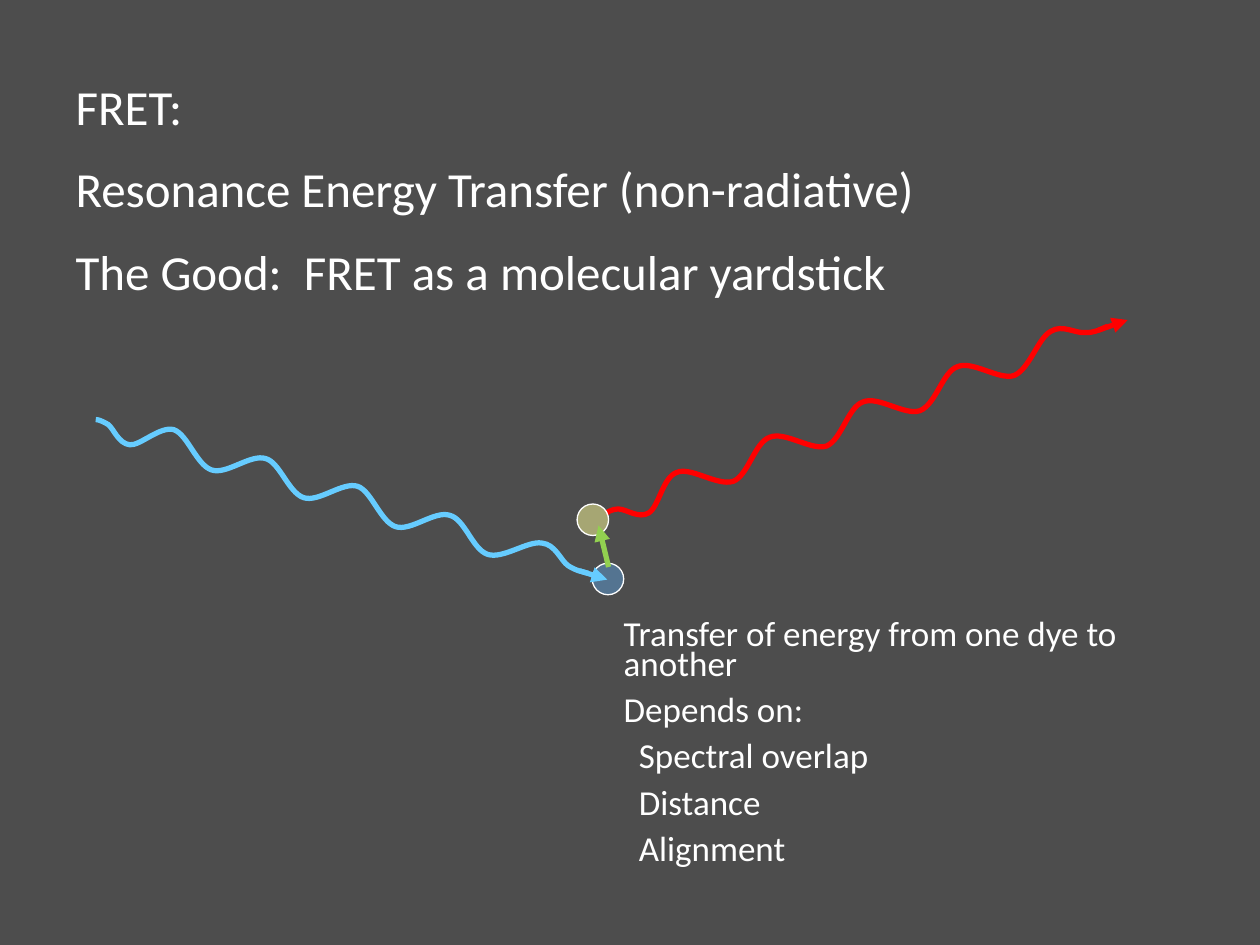
from dataclasses import dataclass

from lxml.etree import SubElement
from pptx import Presentation
from pptx.dml.color import RGBColor
from pptx.enum.shapes import MSO_CONNECTOR as Connector, MSO_SHAPE as Preset
from pptx.enum.text import MSO_ANCHOR as Anchor, MSO_AUTO_SIZE as AutoSize, PP_ALIGN as Align
from pptx.oxml.ns import qn
from pptx.util import Emu, Pt

PX = 9144  # 100 px to the inch
WHITE, SKY, RED, GREEN = "FFFFFF", "66CCFF", "FF0000", "92D050"

Point = tuple[int, int]


@dataclass(frozen=True)
class Dye:
    left: int
    top: int
    color: str


@dataclass(frozen=True)
class Arrow:
    start: Point
    end: Point
    color: str


@dataclass(frozen=True)
class Wave:
    """Bezier points: a lead-in, one cycle repeated with a constant step, a tail."""
    lead: list[Point]
    cycle: list[Point]
    step: tuple[float, float]
    tail: list[Point]
    arrow: Arrow

    def points(self, repeats: int = 3) -> list[Point]:
        dx, dy = self.step
        cycles = [(round(x + n * dx), round(y + n * dy))
                  for n in range(repeats) for x, y in self.cycle]
        return self.lead + cycles + self.tail


@dataclass(frozen=True)
class TextBlock:
    left: int
    top: int
    width: int
    height: int
    size: int
    gap: float
    line_spacing: float
    lines: list[tuple[str, int]]  # wording, indent in px


DONOR = Dye(470, 447, "5B9BD5")
ACCEPTOR = Dye(458, 400, "FFFF99")
TRANSFER = Arrow((483, 450), (475, 417), GREEN)

EXCITATION = Wave(
    lead=[(76, 333), (78, 333), (81, 334), (86, 337), (90, 340), (94, 352), (103, 353),
          (111, 354), (127, 338), (138, 341)],
    cycle=[(149, 345), (156, 369), (168, 373), (180, 377), (199, 360), (211, 364)],
    step=(73, 22.4),
    tail=[(369, 412), (375, 436), (387, 440), (399, 444), (419, 429), (430, 431),
          (441, 432), (445, 445), (451, 449), (457, 453), (463, 454), (467, 455)],
    arrow=Arrow((460, 453), (482, 460), SKY),
)
EMISSION = Wave(
    lead=[(481, 407), (482, 407), (485, 404), (491, 404), (497, 404), (507, 412), (515, 407),
          (523, 402), (526, 379), (537, 375), (548, 370), (569, 386), (582, 382)],
    cycle=[(594, 377), (599, 351), (611, 347), (623, 342), (644, 358), (656, 354)],
    step=(74.33, -28),
    tail=[(817, 293), (824, 268), (834, 263), (843, 257), (854, 265), (862, 264),
          (870, 264), (876, 260), (879, 259)],
    arrow=Arrow((872, 262), (895, 254), RED),
)

HEADING = TextBlock(50, 50, 825, 199, 28, 13.5, 1.0, [
    ("FRET:", 0),
    ("Resonance Energy Transfer (non-radiative)", 0),
    ("The Good:  FRET as a molecular yardstick", 0),
])
FACTORS = TextBlock(485, 482, 474, 219, 20, 9.6, 0.7, [
    ("Transfer of energy from one dye to another", 0),
    ("Depends on:", 0),
    ("Spectral overlap", 12),
    ("Distance", 12),
    ("Alignment", 12),
])


def px(length: int) -> Emu:
    return Emu(length * PX)


def rgb(color: str) -> RGBColor:
    return RGBColor.from_string(color)


def style_line(line, color: str, width: float) -> None:
    line.color.rgb = rgb(color)
    line.width = Pt(width)


def fill_text(placeholder, block: TextBlock) -> None:
    placeholder.left, placeholder.top = px(block.left), px(block.top)
    placeholder.width, placeholder.height = px(block.width), px(block.height)
    frame = placeholder.text_frame
    frame.word_wrap = True
    frame.auto_size = AutoSize.NONE
    frame.vertical_anchor = Anchor.MIDDLE
    for number, (wording, indent) in enumerate(block.lines):
        paragraph = frame.add_paragraph() if number else frame.paragraphs[0]
        properties = paragraph._p.get_or_add_pPr()
        properties.set("marL", str(px(indent)))
        properties.set("indent", "0")
        SubElement(properties, qn("a:buNone"))
        paragraph.alignment = Align.LEFT
        paragraph.line_spacing = block.line_spacing
        paragraph.space_before = Pt(block.gap if number else 0)
        paragraph.space_after = Pt(0)
        run = paragraph.add_run()
        run.text = wording
        run.font.name = "Calibri"
        run.font.size = Pt(block.size)
        run.font.color.rgb = rgb(WHITE)


def draw_dye(shapes, dye: Dye) -> None:
    circle = shapes.add_shape(Preset.OVAL, px(dye.left), px(dye.top), px(25), px(25))
    circle.shadow.inherit = False
    circle.fill.solid()
    circle.fill.fore_color.rgb = rgb(dye.color)
    color = circle._element.spPr.find(".//" + qn("a:srgbClr"))
    SubElement(color, qn("a:alpha"), val="50000")
    style_line(circle.line, WHITE, 0.75)


def draw_arrow(shapes, arrow: Arrow) -> None:
    ends = [px(length) for length in arrow.start + arrow.end]
    connector = shapes.add_connector(Connector.STRAIGHT, *ends)
    style_line(connector.line, arrow.color, 3)
    SubElement(connector.line._get_or_add_ln(), qn("a:tailEnd"), type="triangle")
    SubElement(connector._element.spPr, qn("a:effectLst"))


def curve_segments(freeform) -> None:
    """Turn each three straight segments into one cubic Bezier segment."""
    outline = freeform._element.spPr.find(".//" + qn("a:path"))
    segments = outline.findall(qn("a:lnTo"))
    for first in range(0, len(segments), 3):
        curve = SubElement(outline, qn("a:cubicBezTo"))
        for segment in segments[first:first + 3]:
            curve.append(segment[0])
            outline.remove(segment)


def draw_wave(shapes, wave: Wave) -> None:
    start, *rest = wave.points()
    builder = shapes.build_freeform(*start, scale=PX)
    builder.add_line_segments(rest, close=False)
    freeform = builder.convert_to_shape()
    curve_segments(freeform)
    freeform.shadow.inherit = False
    freeform.fill.background()
    style_line(freeform.line, wave.arrow.color, 3)
    draw_arrow(shapes, wave.arrow)


def main() -> None:
    deck = Presentation()
    deck.slide_width, deck.slide_height = px(1000), px(750)
    slide = deck.slides.add_slide(deck.slide_layouts[1])
    background = slide.background.fill
    background.solid()
    background.fore_color.rgb = rgb("4D4D4D")
    fill_text(slide.shapes.title, HEADING)
    fill_text(slide.placeholders[1], FACTORS)
    draw_dye(slide.shapes, DONOR)
    draw_wave(slide.shapes, EXCITATION)
    draw_wave(slide.shapes, EMISSION)
    draw_dye(slide.shapes, ACCEPTOR)
    draw_arrow(slide.shapes, TRANSFER)
    deck.save("out.pptx")


if __name__ == "__main__":
    main()
